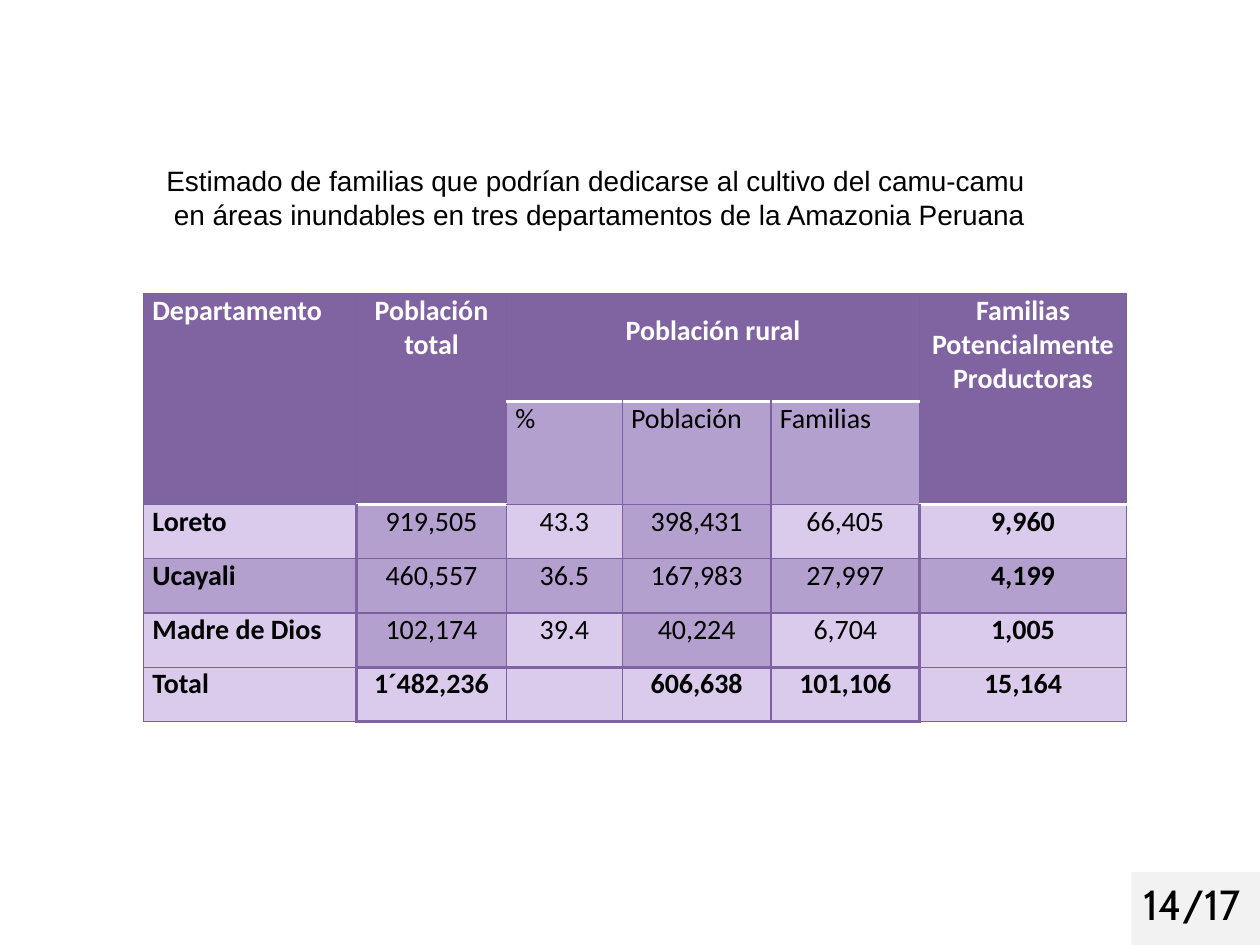
from dataclasses import dataclass

from lxml.etree import SubElement
from pptx import Presentation
from pptx.dml.color import RGBColor
from pptx.enum.shapes import MSO_SHAPE as Preset
from pptx.enum.text import MSO_ANCHOR as Anchor, MSO_AUTO_SIZE as AutoSize, PP_ALIGN as Align
from pptx.oxml.ns import qn
from pptx.util import Inches, Pt


@dataclass(frozen=True)
class Theme:
    header: str = "8064A2"
    medium: str = "B3A0CF"
    light: str = "DACBED"
    grid: str = "7D60A0"
    white: str = "FFFFFF"
    black: str = "000000"
    page_fill: str = "F2F2F2"
    table_font: str = "Calibri"
    title_font: str = "Arial"
    page_font: str = "Cabin"
    body_size: int = 16
    page_size: int = 24
    thin: float = 0.75
    thick: float = 2


THEME = Theme()
COLUMN_WIDTHS = [1.69, 1.19, 0.92, 1.18, 1.18, 1.64]
ROW_HEIGHTS = [0.86, 0.54] + [0.43] * 4
TITLE_LINES = [
    "Estimado de familias que podrían dedicarse al cultivo del camu-camu",
    "en áreas inundables en tres departamentos de la Amazonia Peruana",
]
ROWS = [
    ["Departamento", "Población total", "Población rural", "", "",
     "Familias Potencialmente Productoras"],
    ["", "", "%", "Población", "Familias", ""],
    ["Loreto", "919,505", "43.3", "398,431", "66,405", "9,960"],
    ["Ucayali", "460,557", "36.5", "167,983", "27,997", "4,199"],
    ["Madre de Dios", "102,174", "39.4", "40,224", "6,704", "1,005"],
    ["Total", "1´482,236", "", "606,638", "101,106", "15,164"],
]
SUBHEAD, UCAYALI, TOTAL = 1, 3, 5
RURAL = range(2, 5)


def apply_format(target, values):
    for name, value in values.items():
        setattr(target, name, value)


def format_font(paragraph, name, size, color, bold=False):
    apply_format(paragraph.font, {"name": name, "size": Pt(size), "bold": bold})
    paragraph.font.color.rgb = RGBColor.from_string(color)


def is_header(row, column):
    return row == 0 or (row == SUBHEAD and column not in RURAL)


def cell_color(row, column):
    if is_header(row, column):
        return THEME.header
    if row in (SUBHEAD, UCAYALI) or (row < TOTAL and column in (1, 3)):
        return THEME.medium
    return THEME.light


def horizontal_line(y, column):
    """Line above table row y."""
    if (y == 1 and column in RURAL) or (y == 2 and column in (1, 5)):
        return THEME.white, THEME.thick
    if y >= TOTAL and 1 <= column <= 4:
        return THEME.header, THEME.thick
    return THEME.grid, THEME.thin


def vertical_line(row, x):
    """Line to the left of table column x."""
    if row > SUBHEAD and x in (1, 5):
        return THEME.header, THEME.thick
    return THEME.grid, THEME.thin


def draw_borders(cell, row, column):
    borders = {
        "a:lnL": vertical_line(row, column),
        "a:lnR": vertical_line(row, column + 1),
        "a:lnT": horizontal_line(row, column),
        "a:lnB": horizontal_line(row + 1, column),
    }
    properties = cell._tc.get_or_add_tcPr()
    for tag, (color, width) in borders.items():
        line = SubElement(properties, qn(tag), w=str(Pt(width)))
        fill = SubElement(line, qn("a:solidFill"))
        SubElement(fill, qn("a:srgbClr"), val=color)


def fill_cell(cell, row, column, text):
    apply_format(cell, {"margin_left": Inches(0.07), "margin_right": Inches(0.07),
                        "margin_top": 0, "margin_bottom": 0,
                        "vertical_anchor": Anchor.TOP})
    draw_borders(cell, row, column)
    cell.fill.solid()
    cell.fill.fore_color.rgb = RGBColor.from_string(cell_color(row, column))
    header = is_header(row, column)
    paragraph = cell.text_frame.paragraphs[0]
    paragraph.text = text
    centered = column > 0 and row != SUBHEAD
    paragraph.alignment = Align.CENTER if centered else Align.LEFT
    bold = header or row == TOTAL or (row > SUBHEAD and column in (0, 5))
    format_font(paragraph, THEME.table_font, THEME.body_size,
                THEME.white if header else THEME.black, bold)


def add_title(slide):
    title = slide.shapes.title
    apply_format(title, {"left": Inches(1.22), "top": Inches(1.25),
                         "width": Inches(7.72), "height": Inches(0.91)})
    frame = title.text_frame
    apply_format(frame, {"word_wrap": True, "auto_size": AutoSize.NONE,
                         "vertical_anchor": Anchor.TOP})
    frame.text = "\n".join(TITLE_LINES)
    for paragraph in frame.paragraphs:
        apply_format(paragraph, {"alignment": Align.LEFT, "line_spacing": 1.0,
                                 "space_before": Pt(0)})
        format_font(paragraph, THEME.title_font, THEME.body_size, THEME.black)
    # The second line is set in slightly
    frame.paragraphs[1]._p.get_or_add_pPr().set("marL", str(Inches(0.06)))


def add_families_table(slide):
    table = slide.shapes.add_table(
        len(ROWS), len(COLUMN_WIDTHS), Inches(1.14), Inches(2.33),
        Inches(sum(COLUMN_WIDTHS)), Inches(sum(ROW_HEIGHTS))).table
    for column, width in zip(table.columns, COLUMN_WIDTHS):
        column.width = Inches(width)
    for row, height in zip(table.rows, ROW_HEIGHTS):
        row.height = Inches(height)
    for r, texts in enumerate(ROWS):
        for c, text in enumerate(texts):
            fill_cell(table.cell(r, c), r, c, text)

    # Headings that span rows or columns
    for column in (0, 1, 5):
        table.cell(0, column).merge(table.cell(SUBHEAD, column))
    rural = table.cell(0, RURAL[0])
    rural.merge(table.cell(0, RURAL[-1]))
    apply_format(rural, {"vertical_anchor": Anchor.MIDDLE, "margin_bottom": Inches(0.27)})


def add_page_number(slide):
    page = slide.shapes.add_shape(Preset.RECTANGLE, Inches(8.98), Inches(6.92),
                                  Inches(1.02), Inches(0.61))
    page.shadow.inherit = False
    page.fill.solid()
    page.fill.fore_color.rgb = RGBColor.from_string(THEME.page_fill)
    page.line.fill.background()
    apply_format(page.text_frame, {"word_wrap": False, "vertical_anchor": Anchor.TOP})
    paragraph = page.text_frame.paragraphs[0]
    apply_format(paragraph, {"text": "14/17", "alignment": Align.LEFT})
    format_font(paragraph, THEME.page_font, THEME.page_size, THEME.black)


def main():
    presentation = Presentation()
    apply_format(presentation, {"slide_width": Inches(10), "slide_height": Inches(7.5)})
    slide = presentation.slides.add_slide(presentation.slide_layouts[5])
    add_title(slide)
    add_families_table(slide)
    add_page_number(slide)
    presentation.save("out.pptx")


if __name__ == "__main__":
    main()
